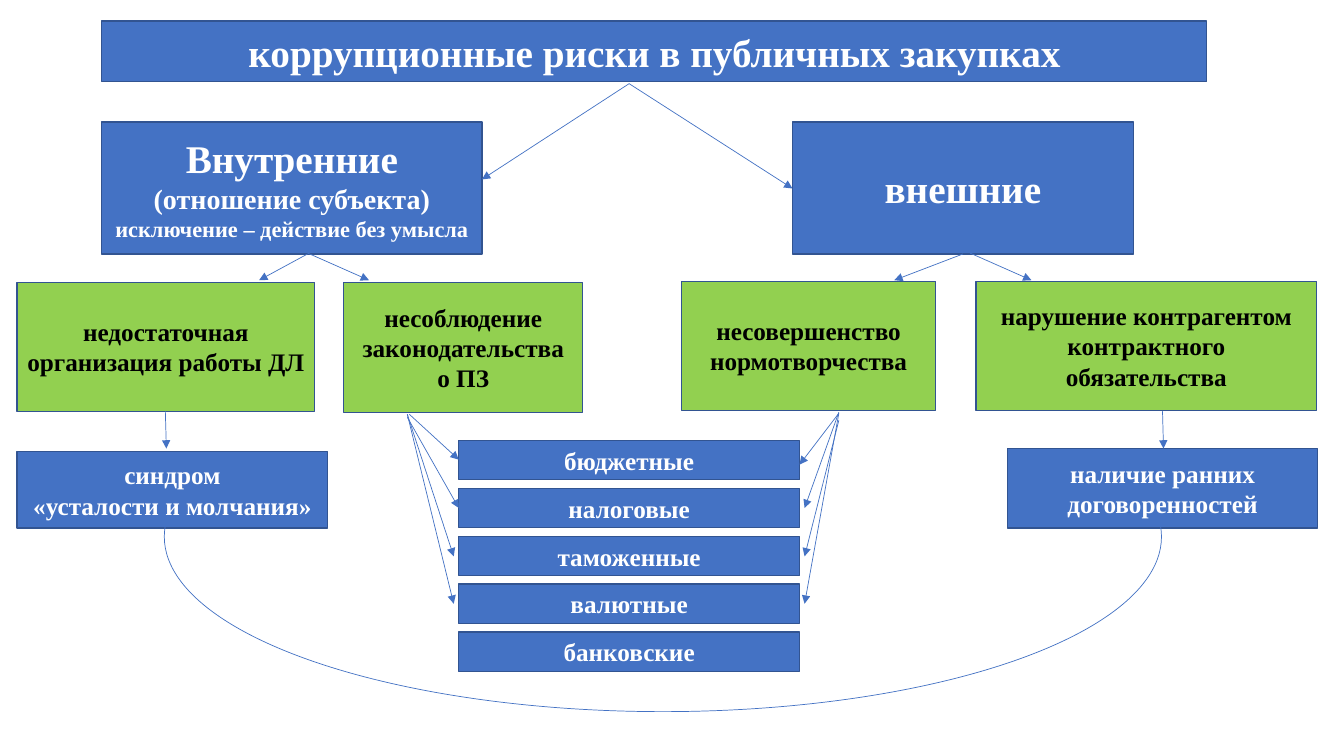
from dataclasses import dataclass

from pptx import Presentation
from pptx.dml.color import RGBColor as RGB
from pptx.enum.shapes import MSO_CONNECTOR as Connector, MSO_SHAPE as Shape
from pptx.enum.text import MSO_ANCHOR as Anchor, PP_ALIGN as Align
from pptx.oxml.ns import qn
from pptx.util import Inches, Pt
from lxml import etree


@dataclass(frozen=True)
class Theme:
    font: str = "Times New Roman"
    blue: RGB = RGB(0x44, 0x72, 0xC4)
    green: RGB = RGB(0x92, 0xD0, 0x50)
    border: RGB = RGB(0x32, 0x54, 0x91)
    white: RGB = RGB(0xFF, 0xFF, 0xFF)
    black: RGB = RGB(0, 0, 0)
    title: int = 28
    subtitle: int = 20
    body: int = 18
    note: int = 16
    border_width: float = 1
    line_width: float = 0.5


T = Theme()


def add_box(s, at, lines, fill=T.blue, color=T.white):
    """Bordered box; lines holds (text, size) pairs, one per paragraph."""
    sp = s.shapes.add_shape(Shape.RECTANGLE, *map(Inches, at))
    sp.shadow.inherit = False
    sp.fill.solid()
    sp.fill.fore_color.rgb = fill
    sp.line.color.rgb = T.border
    sp.line.width = Pt(T.border_width)
    tf = sp.text_frame
    tf.word_wrap = True
    tf.vertical_anchor = Anchor.MIDDLE
    for i, (text, size) in enumerate(lines):
        p = tf.add_paragraph() if i else tf.paragraphs[0]
        p.alignment = Align.CENTER
        r = p.add_run()
        r.text = text
        r.font.name = T.font
        r.font.size = Pt(size)
        r.font.bold = True
        r.font.color.rgb = color


def add_arrow(s, start, end):
    c = s.shapes.add_connector(Connector.STRAIGHT, *map(Inches, start + end))
    c.line.color.rgb = T.blue
    c.line.width = Pt(T.line_width)
    etree.SubElement(c.line._get_or_add_ln(), qn("a:tailEnd"), type="triangle")
    etree.SubElement(c._element.spPr, qn("a:effectLst"))


def add_arc(s, at, start_deg, end_deg):
    sp = s.shapes.add_shape(Shape.ARC, *map(Inches, at))
    sp.shadow.inherit = False
    sp.fill.background()
    sp.line.color.rgb = T.blue
    sp.line.width = Pt(T.line_width)
    # Angles are stored in 1/60000 degree, adjustments in 1/100000
    sp.adjustments[0] = start_deg * 0.6
    sp.adjustments[1] = end_deg * 0.6


def main():
    prs = Presentation()
    prs.slide_width, prs.slide_height = Inches(13.33), Inches(7.5)
    s = prs.slides.add_slide(prs.slide_layouts[6])

    # Title and the two risk groups
    add_box(s, (1.01, 0.21, 10.96, 0.6),
            [("коррупционные риски в публичных закупках", T.title)])
    add_box(s, (1.01, 1.21, 3.77, 1.31),
            [("Внутренние", T.title),
             ("(отношение субъекта)", T.subtitle),
             ("исключение – действие без умысла", T.note)])
    add_box(s, (7.86, 1.21, 3.38, 1.31), [("внешние", T.title)])

    # Risk causes
    causes = [
        ((0.17, 2.8, 2.95, 1.28), "недостаточная организация работы ДЛ"),
        ((3.41, 2.8, 2.37, 1.29), "несоблюдение законодательства о ПЗ"),
        ((6.76, 2.79, 2.52, 1.28), "несовершенство нормотворчества"),
        ((9.68, 2.79, 3.38, 1.28),
         "нарушение контрагентом контрактного обязательства"),
    ]
    for at, text in causes:
        add_box(s, at, [(text, T.body)], T.green, T.black)

    # Areas of law
    areas = ["бюджетные", "налоговые", "таможенные", "валютные", "банковские"]
    for i, area in enumerate(areas):
        add_box(s, (4.55, 4.37 + i * 0.475, 3.38, 0.39), [(area, T.body)])

    # Consequences and the arc that joins them
    add_box(s, (0.17, 4.48, 3.08, 0.76),
            [("синдром", T.body), ("«усталости и молчания»", T.body)])
    add_box(s, (9.99, 4.45, 3.08, 0.79),
            [("наличие ранних договоренностей", T.body)])
    add_arc(s, (1.63, 3.59, 9.89, 3.47), 358.75, 181.1)

    # Arrows
    arrows = [
        # title to groups
        ((6.24, 0.83), (4.78, 1.78)),
        ((6.24, 0.83), (7.86, 1.87)),
        # groups to causes
        ((3.05, 2.52), (2.57, 2.78)),
        ((3.05, 2.51), (3.66, 2.78)),
        ((9.55, 2.52), (8.87, 2.78)),
        ((9.62, 2.51), (10.23, 2.78)),
        # causes to consequences
        ((1.64, 4.08), (1.65, 4.45)),
        ((11.53, 4.08), (11.54, 4.45)),
        # legislation to areas
        ((4.06, 4.11), (4.55, 4.56)),
        ((4.04, 4.14), (4.55, 5.04)),
        ((4.04, 4.11), (4.5, 5.52)),
        ((4.04, 4.11), (4.5, 5.99)),
        # rule-making to areas
        ((8.32, 4.1), (7.93, 4.61)),
        ((8.32, 4.09), (7.98, 5.04)),
        ((8.32, 4.17), (7.98, 5.52)),
        ((8.32, 4.1), (7.98, 5.99)),
    ]
    for start, end in arrows:
        add_arrow(s, start, end)

    prs.save("out.pptx")


if __name__ == "__main__":
    main()
